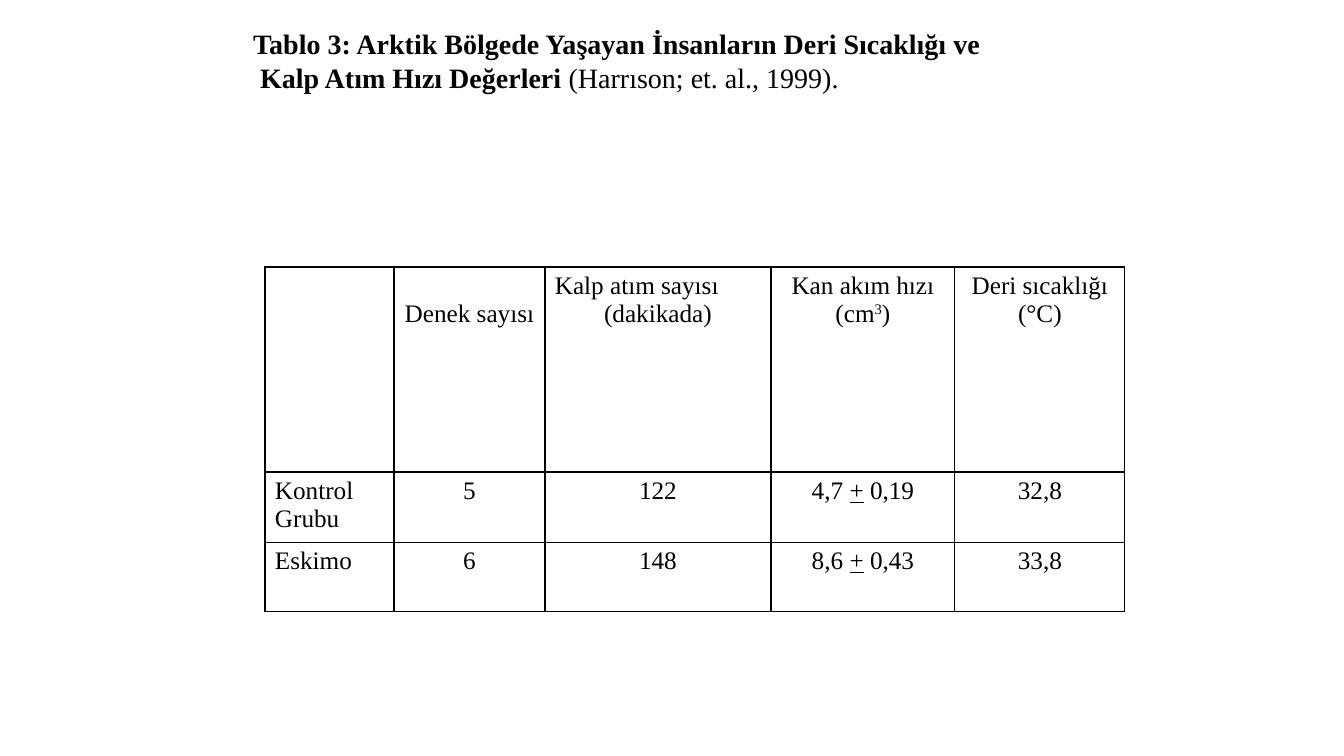
import pptx
import pptx.util
import pptx.dml.color
import pptx.enum.text
import pptx.oxml
import pptx.oxml.ns

PX = 914400 / 100.8
FONT = "Times New Roman"
COLORS = {"ink": "000000", "paper": "FFFFFF"}
ALIGN = pptx.enum.text.PP_ALIGN
COLUMN_WIDTHS = [129, 151, 226, 184, 170]
ROW_HEIGHTS = [205, 70, 69]
LINE_HEIGHT = 28

# Each row holds cells; each cell is a list of lines; each line a list of (text, style)
HEADERS = [
    [[]],
    [[("Denek sayısı", "")]],
    [[("Kalp atım sayısı", "")], [("(dakikada)", "")]],
    [[("Kan akım hızı (cm", ""), ("3", "super"), (")", "")]],
    [[("Deri sıcaklığı (°C)", "")]],
]
GROUPS = [
    ("Kontrol Grubu", "5", "122", ("4,7 ", " 0,19"), "32,8"),
    ("Eskimo", "6", "148", ("8,6 ", " 0,43"), "33,8"),
]


def px(length):
    return pptx.util.Emu(round(length * PX))


def color(name):
    return pptx.dml.color.RGBColor.from_string(COLORS[name])


def format_paragraph(para, size, align, bold=False):
    para.alignment = align
    para.font.name = FONT
    para.font.size = pptx.util.Pt(size)
    para.font.bold = bold
    para.font.color.rgb = color("ink")


def add_spans(para, spans):
    for text, style in spans:
        span = para.add_run()
        span.text = text
        if style == "super":
            span._r.get_or_add_rPr().set("baseline", "30000")
        elif style == "underline":
            span.font.underline = True
        elif style == "plain":
            span.font.bold = False


def add_title(page):
    box = page.shapes.title
    box.left, box.top, box.width, box.height = map(px, (243, 21, 754, 78))
    frame = box.text_frame
    frame.word_wrap = False
    frame.auto_size = pptx.enum.text.MSO_AUTO_SIZE.SHAPE_TO_FIT_TEXT
    frame.vertical_anchor = pptx.enum.text.MSO_ANCHOR.MIDDLE
    first, second = frame.paragraphs[0], frame.add_paragraph()
    add_spans(first, [("Tablo 3: Arktik Bölgede Yaşayan İnsanların Deri Sıcaklığı ve", "")])
    add_spans(second, [("Kalp Atım Hızı Değerleri ", ""), ("(Harrıson; et. al., 1999).", "plain")])
    second._p.get_or_add_pPr().set("marL", str(px(7)))
    for para in (first, second):
        format_paragraph(para, 20, ALIGN.JUSTIFY, bold=True)


def set_borders(cell):
    properties = cell._tc.get_or_add_tcPr()
    for index, side in enumerate(("lnL", "lnR", "lnT", "lnB")):
        line = pptx.oxml.parse_xml(
            f'<a:{side} {pptx.oxml.ns.nsdecls("a")} w="12700"><a:solidFill>'
            f'<a:srgbClr val="{COLORS["ink"]}"/></a:solidFill></a:{side}>')
        properties.insert(index, line)


def fill_cell(cell, lines, align):
    cell.fill.solid()
    cell.fill.fore_color.rgb = color("paper")
    cell.margin_left = cell.margin_right = px(10)
    cell.margin_top = cell.margin_bottom = px(5)
    set_borders(cell)
    frame = cell.text_frame
    for index, spans in enumerate(lines):
        para = frame.add_paragraph() if index else frame.paragraphs[0]
        add_spans(para, spans)
        format_paragraph(para, 18, align)


def value_lines(value):
    if isinstance(value, tuple):
        mean, deviation = value
        return [[(mean, ""), ("+", "underline"), (deviation, "")]]
    return [[(value, "")]]


def add_measurements(page):
    rows = [HEADERS] + [[value_lines(value) for value in group] for group in GROUPS]
    frame = page.shapes.add_table(
        len(rows), len(COLUMN_WIDTHS), px(265), px(267),
        px(sum(COLUMN_WIDTHS)), px(sum(ROW_HEIGHTS)))
    table = frame.table
    table.first_row = table.horz_banding = False
    for column, width in zip(table.columns, COLUMN_WIDTHS):
        column.width = px(width)
    for row, height in zip(table.rows, ROW_HEIGHTS):
        row.height = px(height)
    for row_index, row in enumerate(rows):
        for column_index, lines in enumerate(row):
            align = ALIGN.CENTER if column_index else ALIGN.JUSTIFY
            fill_cell(table.cell(row_index, column_index), lines, align)
    # Two headers sit off the common position
    table.cell(0, 1).margin_top = px(5 + LINE_HEIGHT)
    table.cell(0, 2).text_frame.paragraphs[0].alignment = ALIGN.LEFT


def main():
    deck = pptx.Presentation()
    deck.slide_width, deck.slide_height = px(1344), px(756)
    page = deck.slides.add_slide(deck.slide_layouts[5])
    page.background.fill.solid()
    page.background.fill.fore_color.rgb = color("paper")
    add_title(page)
    add_measurements(page)
    deck.save("out.pptx")


if __name__ == "__main__":
    main()
